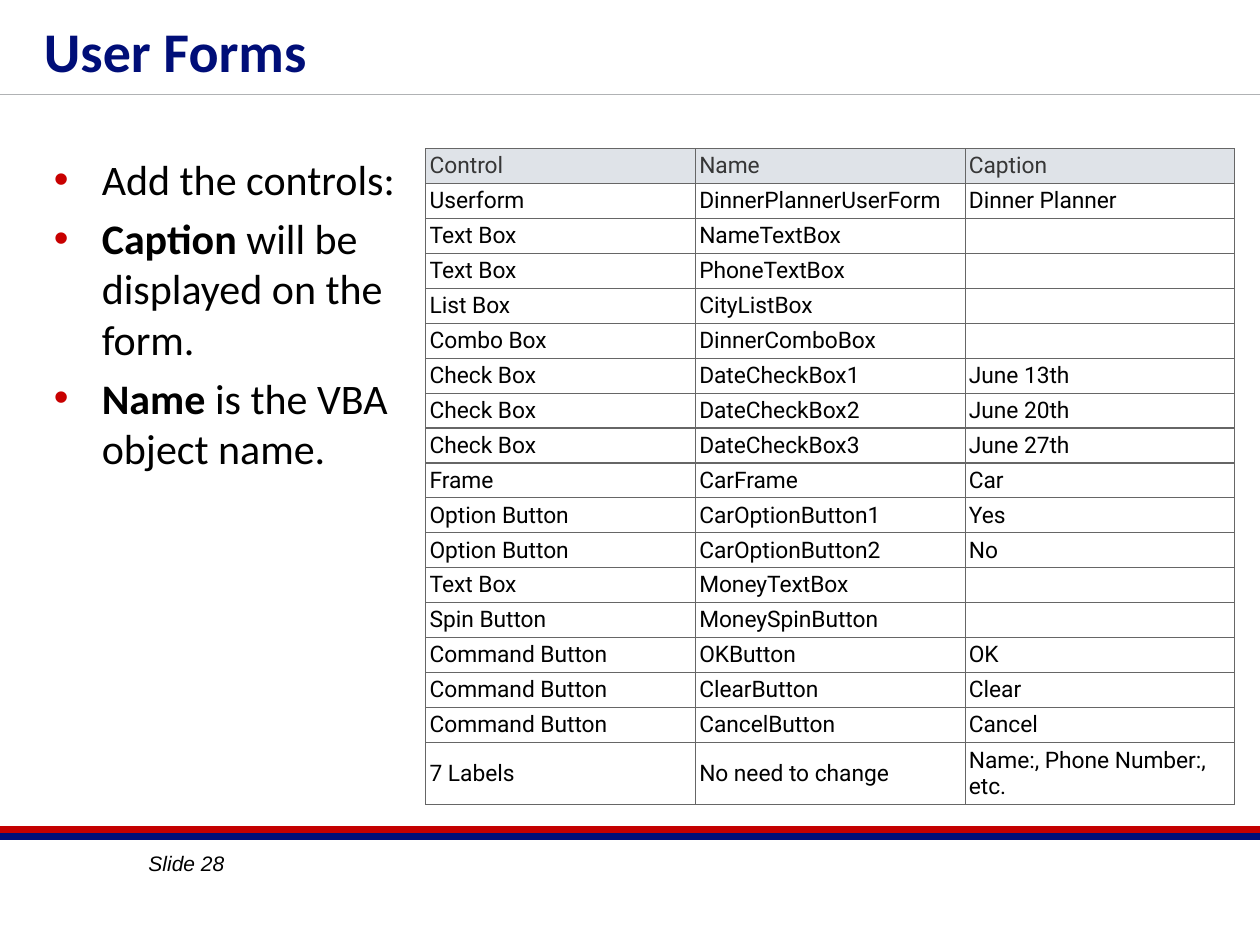
from lxml import etree
from pptx import Presentation
from pptx.dml.color import RGBColor
from pptx.enum.shapes import MSO_CONNECTOR as Connector
from pptx.enum.text import MSO_ANCHOR as Anchor
from pptx.oxml.ns import qn
from pptx.util import Inches, Pt

WIDTH, HEIGHT = 10, 7.5
NAVY, RED, BLACK = "000E78", "C40000", "000000"
ROW_HEIGHT, LAST_ROW_HEIGHT, COLUMN_WIDTH = 0.27, 0.48, 2.14
CELL_MARGIN = Inches(0.03)
BULLET_INDENT = Inches(0.38)

POINTS = [
    [("Add the controls:", False)],
    [("Caption", True), (" will be displayed on the form.", False)],
    [("Name", True), (" is the VBA object name.", False)],
]
CONTROLS = [
    ("Control", "Name", "Caption"),
    ("Userform", "DinnerPlannerUserForm", "Dinner Planner"),
    ("Text Box", "NameTextBox", ""),
    ("Text Box", "PhoneTextBox", ""),
    ("List Box", "CityListBox", ""),
    ("Combo Box", "DinnerComboBox", ""),
    ("Check Box", "DateCheckBox1", "June 13th"),
    ("Check Box", "DateCheckBox2", "June 20th"),
    ("Check Box", "DateCheckBox3", "June 27th"),
    ("Frame", "CarFrame", "Car"),
    ("Option Button", "CarOptionButton1", "Yes"),
    ("Option Button", "CarOptionButton2", "No"),
    ("Text Box", "MoneyTextBox", ""),
    ("Spin Button", "MoneySpinButton", ""),
    ("Command Button", "OKButton", "OK"),
    ("Command Button", "ClearButton", "Clear"),
    ("Command Button", "CancelButton", "Cancel"),
    ("7 Labels", "No need to change", "Name:, Phone Number:, etc."),
]


def paint(target, color):
    """Give a font colour or a fill the colour of a hex string."""
    target.rgb = RGBColor.from_string(color)


def style(paragraph, name, size, color, bold=None, italic=None):
    """Set the font of a whole paragraph."""
    font = paragraph.font
    font.name, font.size, font.bold, font.italic = name, Pt(size), bold, italic
    paint(font.color, color)


def add_rule(slide, y, color, weight):
    """Draw a horizontal line across the slide."""
    rule = slide.shapes.add_connector(
        Connector.STRAIGHT, 0, Inches(y), Inches(WIDTH), Inches(y))
    paint(rule.line.color, color)
    rule.line.width = Pt(weight)
    etree.SubElement(rule._element.spPr, qn("a:effectLst"))


def add_text_frame(slide, left, top, width, height, anchor=Anchor.TOP):
    """Add a wrapping text box and return its text frame."""
    box = slide.shapes.add_textbox(*map(Inches, (left, top, width, height)))
    frame = box.text_frame
    frame.word_wrap = True
    frame.vertical_anchor = anchor
    return frame


def add_label(slide, text, place, anchor=Anchor.TOP, **font):
    """Add a single line of text."""
    paragraph = add_text_frame(slide, *place, anchor).paragraphs[0]
    paragraph.text = text
    style(paragraph, **font)


def add_bullet(paragraph):
    """Give a paragraph a hanging red bullet."""
    properties = paragraph._p.get_or_add_pPr()
    properties.set("marL", str(BULLET_INDENT))
    properties.set("indent", str(-BULLET_INDENT))
    color = etree.SubElement(properties, qn("a:buClr"))
    etree.SubElement(color, qn("a:srgbClr"), val="C80000")
    etree.SubElement(properties, qn("a:buFont"), typeface="Arial")
    etree.SubElement(properties, qn("a:buChar"), char="•")


def add_points(slide):
    """Add the bulleted list with its bold key words."""
    frame = add_text_frame(slide, 0.33, 1.17, 2.96, 5.08)
    for index, point in enumerate(POINTS):
        paragraph = frame.add_paragraph() if index else frame.paragraphs[0]
        add_bullet(paragraph)
        if index:
            paragraph.space_before = Pt(4.8)
        style(paragraph, "Calibri", 24, BLACK)
        for text, bold in point:
            run = paragraph.add_run()
            run.text, run.font.bold = text, bold


def add_borders(cell):
    """Draw a thin grey line on each side of a cell."""
    properties = cell._tc.get_or_add_tcPr()
    for index, side in enumerate(("lnL", "lnR", "lnT", "lnB")):
        line = etree.Element(qn(f"a:{side}"), w=str(Pt(0.75)))
        fill = etree.SubElement(line, qn("a:solidFill"))
        etree.SubElement(fill, qn("a:srgbClr"), val="666666")
        properties.insert(index, line)


def fill_cell(cell, text, color, background):
    """Write and format one table cell."""
    cell.margin_left = cell.margin_right = CELL_MARGIN
    cell.margin_top = cell.margin_bottom = CELL_MARGIN
    cell.vertical_anchor = Anchor.MIDDLE
    cell.fill.solid()
    paint(cell.fill.fore_color, background)
    add_borders(cell)
    paragraph = cell.text_frame.paragraphs[0]
    paragraph.text = text
    style(paragraph, "Roboto", 13, color)
    if not text:
        etree.SubElement(paragraph._p, qn("a:endParaRPr"), sz="1300")


def add_controls_table(slide):
    """Add the table of form controls."""
    heights = [ROW_HEIGHT] * (len(CONTROLS) - 1) + [LAST_ROW_HEIGHT]
    columns = len(CONTROLS[0])
    place = (3.38, 1.18, columns * COLUMN_WIDTH, sum(heights))
    table = slide.shapes.add_table(
        len(CONTROLS), columns, *map(Inches, place)).table
    for column in table.columns:
        column.width = Inches(COLUMN_WIDTH)
    for index, (texts, height) in enumerate(zip(CONTROLS, heights)):
        row = table.rows[index]
        row.height = Inches(height)
        colors = (BLACK, "FFFFFF") if index else ("363636", "DFE3E8")
        for cell, text in zip(row.cells, texts):
            fill_cell(cell, text, *colors)


def main():
    """Build the slide and save it."""
    deck = Presentation()
    deck.slide_width, deck.slide_height = Inches(WIDTH), Inches(HEIGHT)
    slide = deck.slides.add_slide(deck.slide_layouts[6])
    for y, color, weight in ((0.75, "B0B2B4", 0.75), (6.58, RED, 4), (6.64, NAVY, 4)):
        add_rule(slide, y, color, weight)
    add_label(slide, "Slide 28", (1.08, 6.7, 1.08, 0.3),
              name="Arial", size=12, color=BLACK, italic=True)
    add_label(slide, "User Forms", (0.25, -0.23, 7.78, 1.25), Anchor.MIDDLE,
              name="Calibri", size=32, color=NAVY, bold=True)
    add_points(slide)
    add_controls_table(slide)
    deck.save("out.pptx")


if __name__ == "__main__":
    main()
